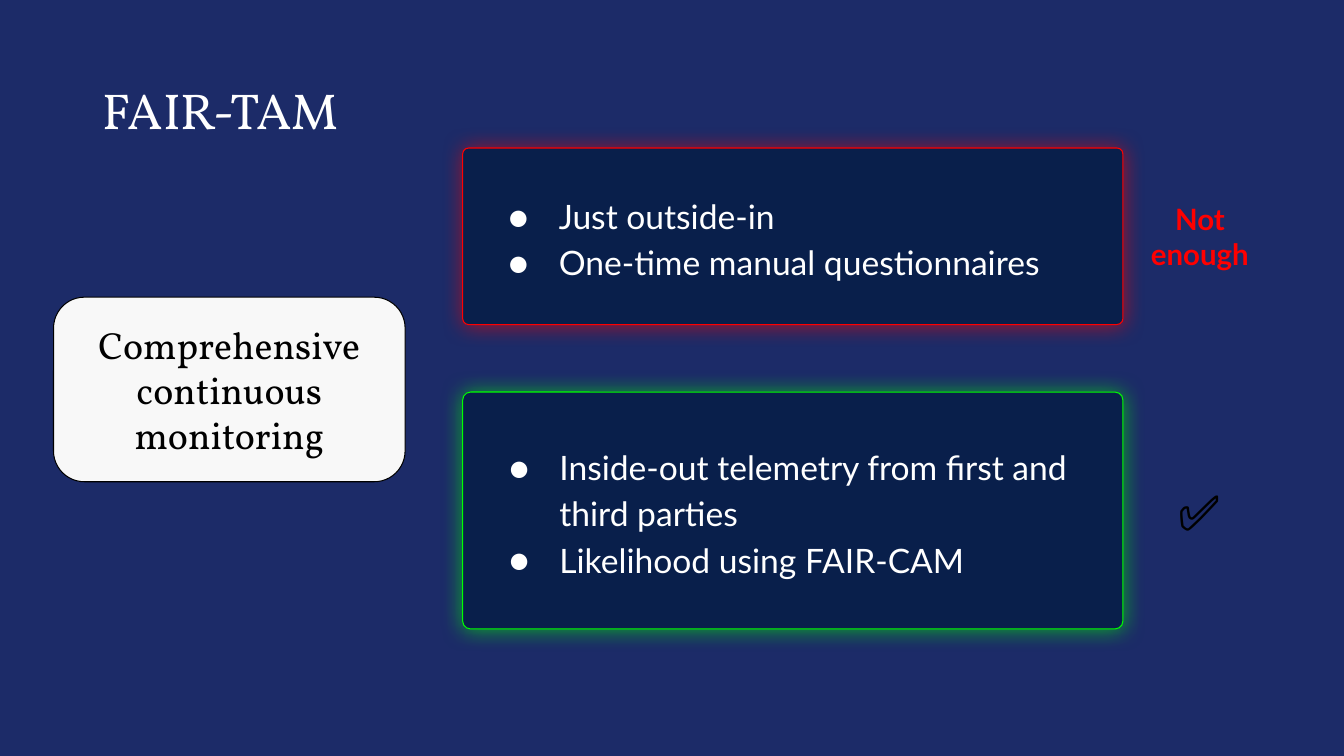
from dataclasses import dataclass

from lxml import etree
from pptx import Presentation
from pptx.dml.color import RGBColor
from pptx.enum.shapes import MSO_SHAPE
from pptx.enum.text import MSO_ANCHOR, PP_ALIGN
from pptx.oxml.ns import qn
from pptx.util import Cm, Pt

ROUNDED = MSO_SHAPE.ROUNDED_RECTANGLE
MIDDLE = MSO_ANCHOR.MIDDLE
LEFT, CENTER = PP_ALIGN.LEFT, PP_ALIGN.CENTER


@dataclass(frozen=True)
class Theme:
    """Colours, fonts and type sizes of the slide."""
    background: str = "1C2B68"
    panel: str = "091F4B"
    card: str = "F8F8F8"
    light: str = "FFFFFF"
    dark: str = "000000"
    bad: str = "FF0000"
    good: str = "00FF00"
    heading: str = "Vollkorn"
    body: str = "Lato"
    title_size: int = 36
    card_size: int = 27
    panel_size: int = 24
    verdict_size: int = 21
    mark_size: int = 35


THEME = Theme()


def add_child(parent, tag, **attrs):
    """Append an XML element to parent and return it."""
    child = etree.SubElement(parent, qn(tag))
    for name, value in attrs.items():
        child.set(name, str(value))
    return child


def write(sp, lines, font, size, color, inset, align=LEFT, spacing=None,
          bold=False, bulleted=False):
    """Fill a shape with formatted, vertically centred lines."""
    tf = sp.text_frame
    tf.word_wrap = True
    tf.vertical_anchor = MIDDLE
    tf.margin_left = tf.margin_right = Cm(inset[0])
    tf.margin_top = tf.margin_bottom = Cm(inset[1])
    tf.text = "\n".join(lines)
    for p in tf.paragraphs:
        p.alignment = align
        if spacing:
            p.line_spacing = spacing
        if bulleted:
            add_bullet(p, color)
        for r in p.runs:
            r.font.name = font
            r.font.size = Pt(size)
            r.font.bold = bold
            r.font.color.rgb = RGBColor.from_string(color)


def add_bullet(p, color):
    """Give a paragraph a hanging round bullet."""
    pPr = p._p.get_or_add_pPr()
    pPr.set("marL", str(Cm(1.7)))
    pPr.set("indent", str(-Cm(1.27)))
    add_child(add_child(pPr, "a:buClr"), "a:srgbClr", val=color)
    add_child(pPr, "a:buFont", typeface=THEME.body)
    add_child(pPr, "a:buChar", char="●")


def add_glow(sp, color):
    """Put a soft coloured shadow around a shape."""
    effects = sp._element.spPr.find(qn("a:effectLst"))
    shadow = add_child(effects, "a:outerShdw", blurRad=Pt(15.8), dist=0,
                       dir=0, algn="bl", rotWithShape=0)
    add_child(add_child(shadow, "a:srgbClr", val=color), "a:alpha", val=60000)


def add_rounded(s, box, corner, fill, line):
    """Draw an outlined rounded rectangle in the box."""
    sp = s.shapes.add_shape(ROUNDED, *map(Cm, box))
    sp.adjustments[0] = corner
    sp.shadow.inherit = False
    sp.fill.solid()
    sp.fill.fore_color.rgb = RGBColor.from_string(fill)
    sp.line.color.rgb = RGBColor.from_string(line)
    sp.line.width = Pt(0.75)
    return sp


def add_title(s, box, text):
    """Write the slide title in the box."""
    sp = s.shapes.add_textbox(*map(Cm, box))
    write(sp, [text], THEME.heading, THEME.title_size, THEME.light,
          (0.25, 0.13), spacing=0.9)


def add_card(s, box, text):
    """Draw the light topic card in the box."""
    sp = add_rounded(s, box, 0.167, THEME.card, THEME.dark)
    write(sp, [text], THEME.heading, THEME.card_size, THEME.dark,
          (0.34, 0.34), CENTER)


def add_panel(s, box, points, accent):
    """Draw a glowing panel of bulleted points in the box."""
    sp = add_rounded(s, box, 0.034, THEME.panel, accent)
    add_glow(sp, accent)
    write(sp, points, THEME.body, THEME.panel_size, THEME.light,
          (0.68, 0.68), spacing=1.15, bulleted=True)


def add_verdict(s, box, lines, size, color, bold=False):
    """Write the verdict beside a panel in the box."""
    sp = s.shapes.add_textbox(*map(Cm, box))
    write(sp, lines, THEME.body, size, color, (0.34, 0.34), CENTER, bold=bold)


def build_slide(prs):
    """Compose the monitoring comparison slide."""
    s = prs.slides.add_slide(prs.slide_layouts[6])
    s.background.fill.solid()
    s.background.fill.fore_color.rgb = RGBColor.from_string(THEME.background)

    add_title(s, (2.33, 1.02, 29.21, 3.68), "FAIR-TAM")
    panel_left, panel_width = 11.66, 16.64
    add_panel(s, (panel_left, 3.73, panel_width, 4.45),
              ["Just outside-in", "One-time manual questionnaires"], THEME.bad)
    add_panel(s, (panel_left, 9.88, panel_width, 5.97),
              ["Inside-out telemetry from first and third parties",
               "Likelihood using FAIR-CAM"], THEME.good)
    add_verdict(s, (28.45, 4.7, 3.58, 2.51), ["Not", "enough"],
                THEME.verdict_size, THEME.bad, bold=True)
    add_verdict(s, (29.21, 11.79, 2.03, 2.16), ["✅"],
                THEME.mark_size, THEME.dark)
    add_card(s, (1.35, 7.49, 8.86, 4.65),
             "Comprehensive continuous monitoring")


def main():
    """Build and save the presentation."""
    prs = Presentation()
    prs.slide_width, prs.slide_height = Cm(33.87), Cm(19.05)
    build_slide(prs)
    prs.save("out.pptx")


if __name__ == "__main__":
    main()
